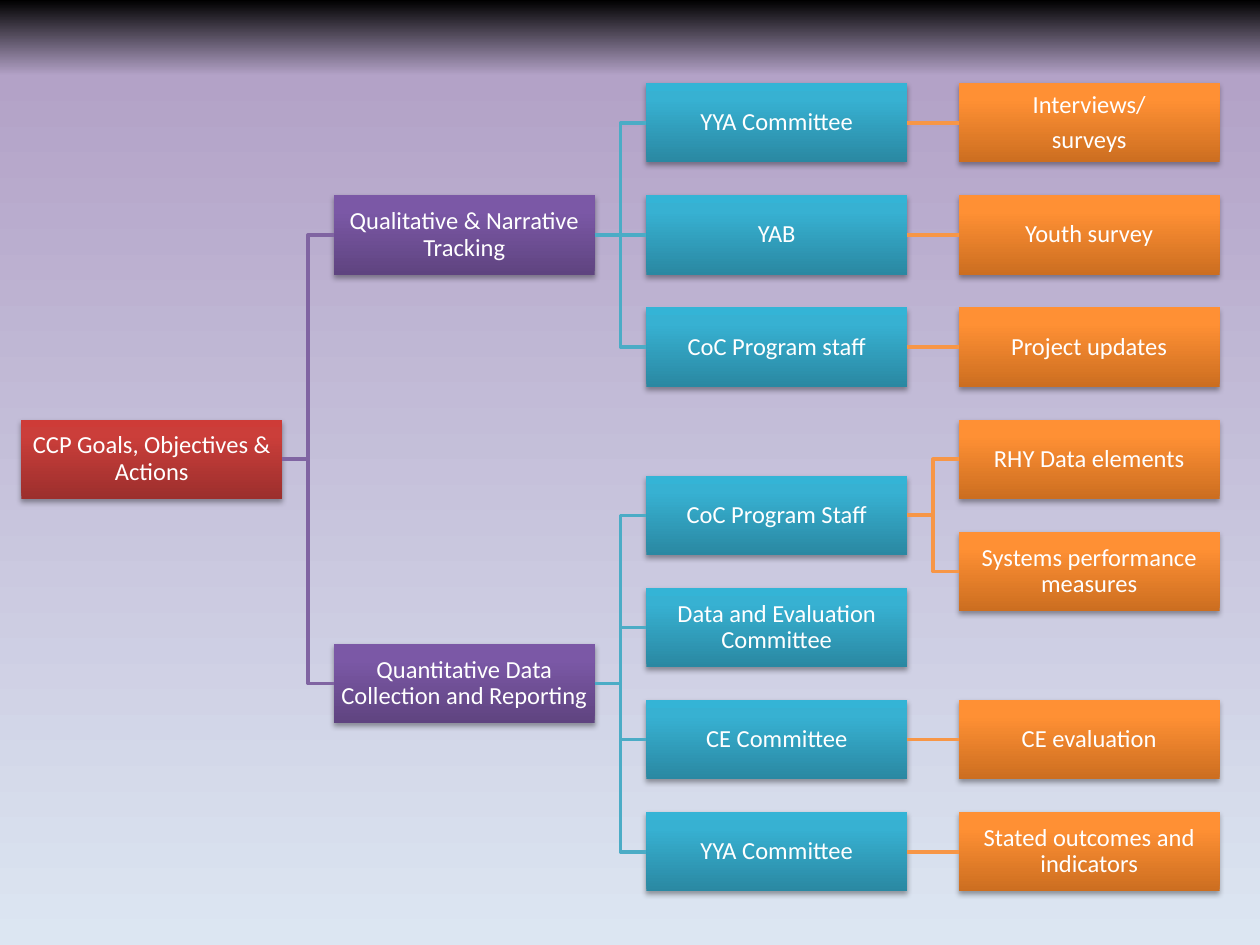
from dataclasses import dataclass

from lxml import etree
from pptx import Presentation
from pptx import util as u
from pptx.dml.color import RGBColor
from pptx.enum import shapes, text
from pptx.oxml.ns import qn

COLUMN_LEFTS = [0.17, 2.65, 5.13, 7.61]
FIRST_TOP = 0.66
ROW_STEP = 0.89
BOX_WIDTH, BOX_HEIGHT = 2.07, 0.63
LEFT_SITE, RIGHT_SITE = 1, 3

# Per column: gradient from the bottom edge up, and colour of the incoming line
COLUMN_GRADIENTS = [
    [(0, "9C2F2D"), (80, "CB3E3A"), (100, "CE3B37")],
    [(0, "5F4480"), (80, "7B58A6"), (100, "7C57A8")],
    [(0, "2A88A2"), (80, "37B1D2"), (100, "34B4D6")],
    [(0, "CC6E20"), (80, "FF9034"), (100, "FF9136")],
]
LINE_COLORS = [None, "8064A2", "4BACC6", "F79646"]
BACKGROUND = [(0, "000000"), (8, "B3A2C7"), (100, "DCE6F2")]

# Each node: label, row, children
TREE = ("CCP Goals, Objectives & Actions", 3, [
    ("Qualitative & Narrative Tracking", 1, [
        ("YYA Committee", 0, [("Interviews/\nsurveys", 0, [])]),
        ("YAB", 1, [("Youth survey", 1, [])]),
        ("CoC Program staff", 2, [("Project updates", 2, [])]),
    ]),
    ("Quantitative Data Collection and Reporting", 5, [
        ("CoC Program Staff", 3.5, [
            ("RHY Data elements", 3, []),
            ("Systems performance measures", 4, []),
        ]),
        ("Data and Evaluation Committee", 4.5, []),
        ("CE Committee", 5.5, [("CE evaluation", 5.5, [])]),
        ("YYA Committee", 6.5, [("Stated outcomes and indicators", 6.5, [])]),
    ]),
])


def color(hex_string):
    return RGBColor.from_string(hex_string)


def add_xml(parent, tag, **attributes):
    values = {name: str(value) for name, value in attributes.items()}
    return etree.SubElement(parent, qn(tag), values)


def set_gradient(fill, element, stops, angle):
    """Fill with any number of stops; angle runs clockwise from the left edge."""
    fill.gradient()
    gradient = element.find(".//" + qn("a:gradFill"))
    for child in list(gradient):
        gradient.remove(child)
    stop_list = add_xml(gradient, "a:gsLst")
    for position, hex_string in stops:
        stop = add_xml(stop_list, "a:gs", pos=position * 1000)
        add_xml(stop, "a:srgbClr", val=hex_string)
    add_xml(gradient, "a:lin", ang=angle * 60000, scaled=0)


@dataclass
class Diagram:
    slide: object
    font: str = "Calibri"
    size: int = 14
    text_color: str = "FFFFFF"
    line_width: int = 2
    inset: float = 0.01

    def background(self, stops):
        set_gradient(self.slide.background.fill, self.slide.element, stops, 90)

    def shadow(self, shape):
        shape.shadow.inherit = False
        effects = shape.element.spPr.find(qn("a:effectLst"))
        shadow = add_xml(effects, "a:outerShdw", blurRad=u.Pt(3.1),
                         dist=u.Pt(1.8), dir=90 * 60000, rotWithShape=0)
        shade = add_xml(shadow, "a:srgbClr", val="000000")
        add_xml(shade, "a:alpha", val=35000)

    def box(self, label, column, row):
        shape = self.slide.shapes.add_shape(
            shapes.MSO_SHAPE.RECTANGLE,
            u.Inches(COLUMN_LEFTS[column]), u.Inches(FIRST_TOP + row * ROW_STEP),
            u.Inches(BOX_WIDTH), u.Inches(BOX_HEIGHT))
        set_gradient(shape.fill, shape.element, COLUMN_GRADIENTS[column], 270)
        shape.line.fill.background()
        self.shadow(shape)
        self.label(shape.text_frame, label)
        return shape

    def label(self, frame, label):
        frame.text = label
        frame.word_wrap = True
        frame.vertical_anchor = text.MSO_ANCHOR.MIDDLE
        frame.margin_left = frame.margin_right = u.Inches(self.inset)
        frame.margin_top = frame.margin_bottom = u.Inches(self.inset)
        for paragraph in frame.paragraphs:
            paragraph.alignment = text.PP_ALIGN.CENTER
            paragraph.line_spacing = 0.9
            properties = paragraph.line_spacing and paragraph._p.get_or_add_pPr()
            space_after = add_xml(properties, "a:spcAft")
            add_xml(space_after, "a:spcPct", val=35000)
            for run in paragraph.runs:
                run.font.name = self.font
                run.font.size = u.Pt(self.size)
                run.font.color.rgb = color(self.text_color)

    def connect(self, parent, child, hex_string):
        kind = (shapes.MSO_CONNECTOR.STRAIGHT if parent.top == child.top
                else shapes.MSO_CONNECTOR.ELBOW)
        connector = self.slide.shapes.add_connector(kind, 0, 0, 0, 0)
        connector.begin_connect(parent, RIGHT_SITE)
        connector.end_connect(child, LEFT_SITE)
        connector.line.color.rgb = color(hex_string)
        connector.line.width = u.Pt(self.line_width)
        add_xml(connector.element.spPr, "a:effectLst")

    def branch(self, node, column=0):
        """Draw a node, everything under it, and the lines to its children."""
        label, row, children = node
        parent = self.box(label, column, row)
        for child_node in children:
            child = self.branch(child_node, column + 1)
            self.connect(parent, child, LINE_COLORS[column + 1])
        return parent


def main():
    presentation = Presentation()
    presentation.slide_width = u.Inches(10)
    presentation.slide_height = u.Inches(7.5)
    blank_layout = presentation.slide_layouts[6]
    diagram = Diagram(presentation.slides.add_slide(blank_layout))
    diagram.background(BACKGROUND)
    diagram.branch(TREE)
    presentation.save("out.pptx")


if __name__ == "__main__":
    main()
